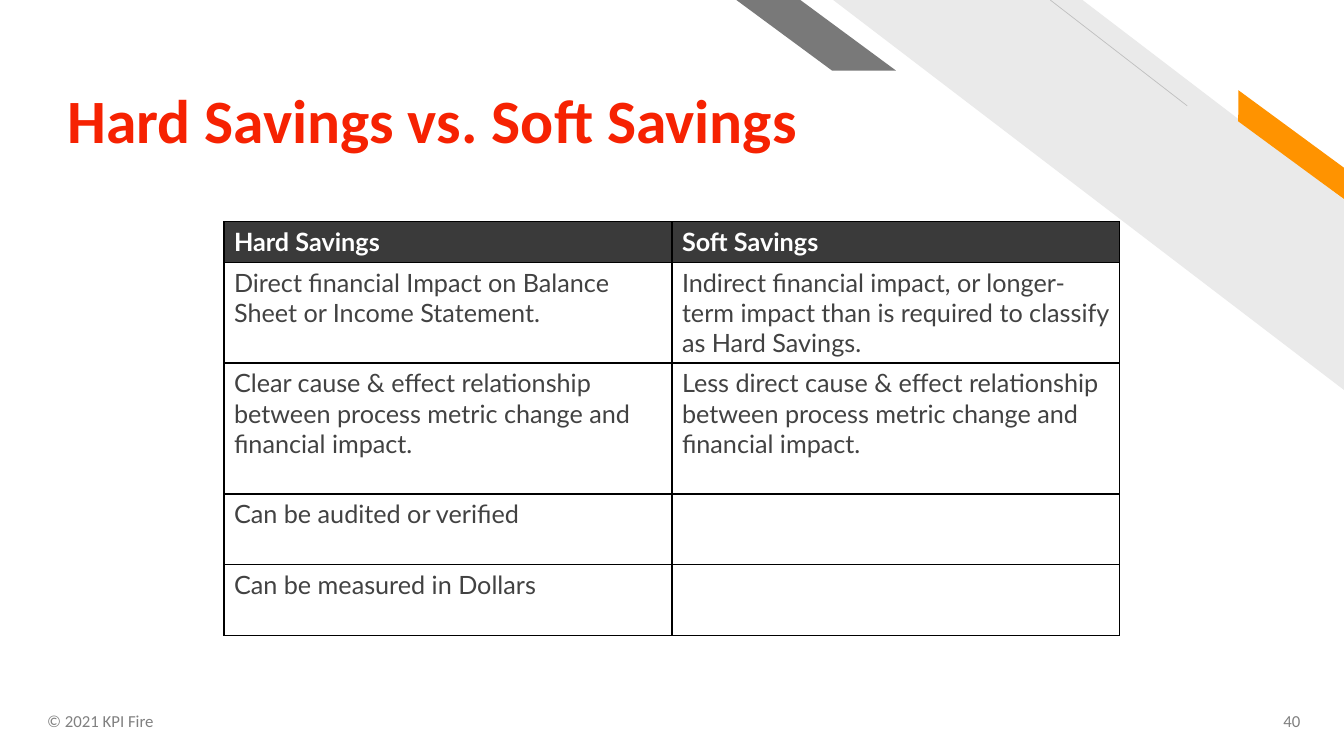
import pptx
import pptx.dml.color
import pptx.enum.shapes
import pptx.enum.text
import pptx.oxml
import pptx.oxml.ns
import pptx.util

Pt = pptx.util.Pt
RGB = pptx.dml.color.RGBColor.from_string
SHAPE = pptx.enum.shapes.MSO_SHAPE
ANCHOR = pptx.enum.text.MSO_ANCHOR
ALIGN = pptx.enum.text.PP_ALIGN

COLORS = {
    "stripe": "EAEAEA", "hairline": "BFBFBF", "orange": "FF9300",
    "gray": "797979", "title": "F62202", "footer": "808080",
    "header": "3A3A3A", "header_text": "FFFFFF", "body": "424242",
    "border": "000000",
}
TITLE = {"name": "Calibri", "size": Pt(44), "bold": True}
FOOTER = {"name": "Calibri", "size": Pt(12)}
HEADER = {"name": "Lato", "size": Pt(18), "bold": True}
BODY = {"name": "Lato", "size": Pt(18), "bold": False}

ROWS = [
    ("Hard Savings", "Soft Savings"),
    ("Direct financial Impact on Balance Sheet or Income Statement.",
     "Indirect financial impact, or longer-term impact than is required "
     "to classify as Hard Savings."),
    ("Clear cause & effect relationship between process metric change and "
     "financial impact.",
     "Less direct cause & effect relationship between process metric change "
     "and financial impact."),
    ("Can be audited or verified", ""),
    ("Can be measured in Dollars", ""),
]
ROW_LINES = [1, 3, 4, 2, 2]
LINE_HEIGHT, CELL_PADDING = 21.6, 7.2


def set_font(font, fmt, color):
    for name, value in fmt.items():
        setattr(font, name, value)
    font.color.rgb = RGB(COLORS[color])


def add_flipped(s, kind, box, adj, color, rotation=0):
    sp = s.shapes.add_shape(kind, *map(Pt, box))
    sp.shadow.inherit = False
    sp.adjustments[0] = adj
    sp.fill.solid()
    sp.fill.fore_color.rgb = RGB(COLORS[color])
    sp.line.fill.background()
    sp.rotation = rotation
    sp._element.spPr.xfrm.set("flipH", "1")


def add_line(s, start, end, color, width):
    sp = s.shapes.add_connector(pptx.enum.shapes.MSO_CONNECTOR.STRAIGHT,
                                *map(Pt, start + end))
    sp.line.color.rgb = RGB(COLORS[color])
    sp.line.width = Pt(width)
    sp._element.spPr.append(pptx.oxml.parse_xml(
        f"<a:effectLst {pptx.oxml.ns.nsdecls('a')}/>"))


def add_text(s, text, box, fmt, color, **frame):
    tf = s.shapes.add_textbox(*map(Pt, box)).text_frame
    tf.word_wrap = True
    for name, value in frame.items():
        setattr(tf, name, value)
    p = tf.paragraphs[0]
    r = p.add_run()
    r.text = text
    set_font(r.font, fmt, color)
    return p


def add_borders(cell):
    tc_pr = cell._tc.get_or_add_tcPr()
    for side in "LRTB":
        tc_pr.append(pptx.oxml.parse_xml(
            f"<a:ln{side} {pptx.oxml.ns.nsdecls('a')} w='{Pt(1)}'><a:solidFill>"
            f"<a:srgbClr val='{COLORS['border']}'/></a:solidFill></a:ln{side}>"))


def add_savings_table(s, left, top, width):
    heights = [n * LINE_HEIGHT + CELL_PADDING for n in ROW_LINES]
    table = s.shapes.add_table(len(ROWS), 2, Pt(left), Pt(top), Pt(width),
                               Pt(sum(heights))).table
    table.horz_banding = False
    for i, texts in enumerate(ROWS):
        table.rows[i].height = Pt(heights[i])
        for j, text in enumerate(texts):
            cell = table.cell(i, j)
            add_borders(cell)
            if i == 0:
                cell.fill.solid()
                cell.fill.fore_color.rgb = RGB(COLORS["header"])
            else:
                cell.fill.background()
            if text:
                r = cell.text_frame.paragraphs[0].add_run()
                r.text = text
                set_font(r.font, BODY if i else HEADER,
                         "body" if i else "header_text")


def main():
    prs = pptx.Presentation()
    prs.slide_width, prs.slide_height = Pt(960), Pt(540)
    s = prs.slides.add_slide(prs.slide_layouts[6])

    # Corner decoration
    add_flipped(s, SHAPE.DIAGONAL_STRIPE, (595.2, 0, 364.8, 278.5), 0.512, "stripe")
    add_line(s, (848, 75.6), (750.2, 0), "hairline", 0.5)
    add_flipped(s, SHAPE.PARALLELOGRAM, (869, 94.3, 106.6, 18), 0.72, "orange", 36.3)
    add_flipped(s, SHAPE.PARALLELOGRAM, (526, 0, 114, 50.4), 1.356, "gray")

    # Title
    p = add_text(s, "Hard Savings vs. Soft Savings", (41, 16.5, 656, 95.8),
                 TITLE, "title", vertical_anchor=ANCHOR.BOTTOM, margin_bottom=0)
    p.line_spacing = 0.9

    # Footer
    add_text(s, "© 2021 KPI Fire", (26.6, 500.4, 324, 28.8), FOOTER, "footer",
             vertical_anchor=ANCHOR.MIDDLE)
    p = add_text(s, "40", (877.7, 500.4, 58.3, 28.8), FOOTER, "footer",
                 vertical_anchor=ANCHOR.MIDDLE)
    p.alignment = ALIGN.RIGHT

    # Comparison table
    add_savings_table(s, 160, 158.4, 640)

    prs.save("out.pptx")


if __name__ == "__main__":
    main()
